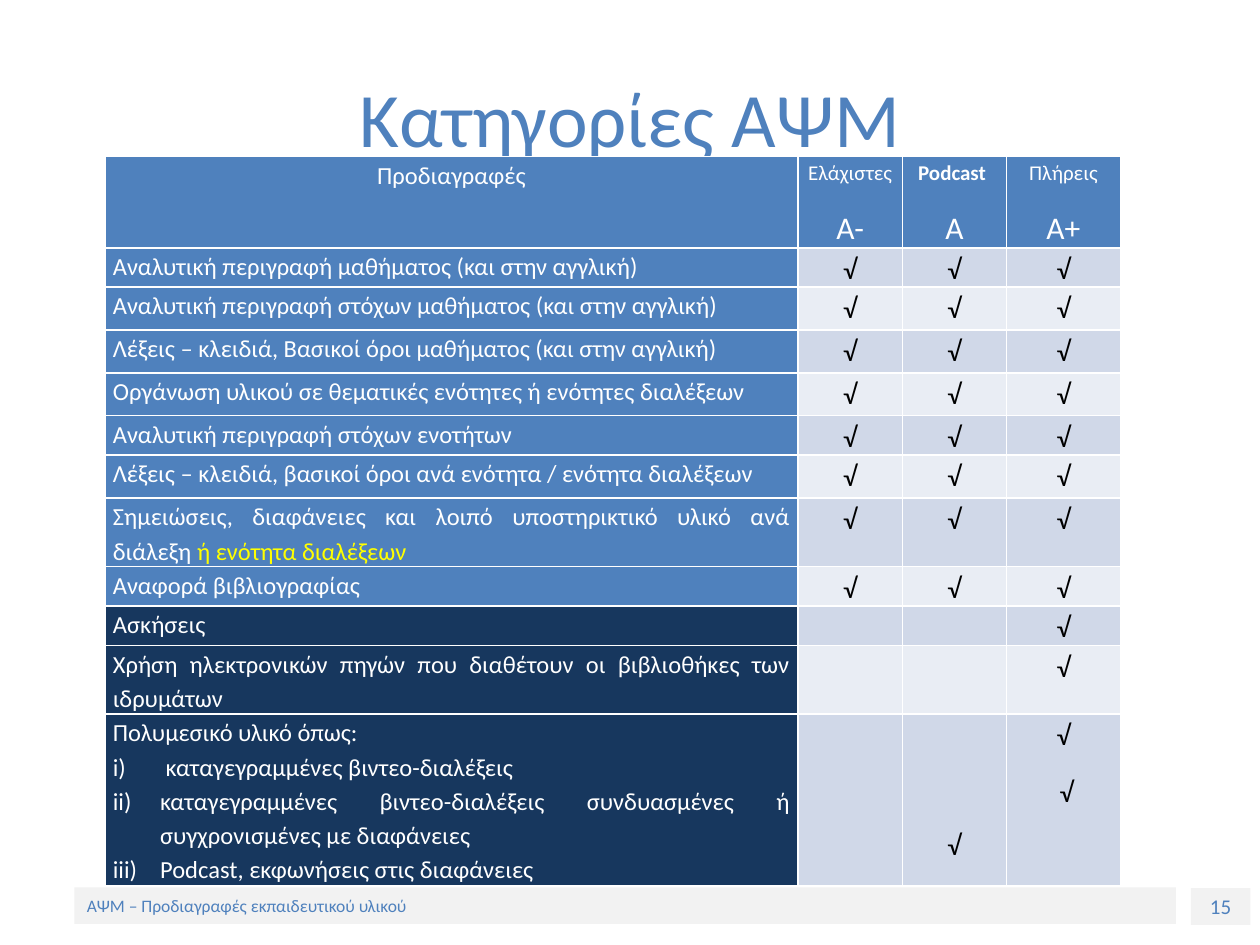
from typing import NamedTuple

from lxml.etree import SubElement
from pptx import Presentation
from pptx.dml.color import RGBColor
from pptx.enum.shapes import MSO_SHAPE
from pptx.enum.text import MSO_ANCHOR, PP_ALIGN
from pptx.oxml.ns import qn
from pptx.util import Pt

FONT = "Calibri"
BLUE, NAVY, WHITE, BLACK = "4F81BD", "17375E", "FFFFFF", "000000"
YELLOW, GREY = "FFFF00", "F2F2F2"
BANDS = ("D0D8E8", "E9EDF4")
CHECK = "√"


class Requirement(NamedTuple):
    text: str
    height: float
    fill: str = BLUE
    marks: tuple = (CHECK, CHECK, CHECK)
    highlight: str = ""


class Category(NamedTuple):
    name: str
    grade: str
    bold: bool = False


class Bar(NamedTuple):
    text: str
    left: float
    top: float
    width: float
    size: float
    alignment: PP_ALIGN


COLUMN_WIDTHS = (396, 59.6, 59.6, 65)
HEADER_HEIGHT = 52
CATEGORIES = (
    Category("Ελάχιστες ", "Α-"),
    Category("Podcast ", "A", True),
    Category("Πλήρεις", "Α+"),
)
FULL_ONLY = ("", "", CHECK)
REQUIREMENTS = (
    Requirement("Αναλυτική περιγραφή μαθήματος (και στην αγγλική)", 22),
    Requirement("Αναλυτική περιγραφή στόχων μαθήματος (και στην αγγλική)", 24.5),
    Requirement("Λέξεις – κλειδιά, Βασικοί όροι μαθήματος (και στην αγγλική)", 24.5),
    Requirement("Οργάνωση υλικού σε θεματικές ενότητες ή ενότητες διαλέξεων", 24.5),
    Requirement("Αναλυτική περιγραφή στόχων ενοτήτων ", 22),
    Requirement("Λέξεις – κλειδιά, βασικοί όροι ανά ενότητα / ενότητα διαλέξεων ", 24.5),
    Requirement("Σημειώσεις, διαφάνειες και λοιπό υποστηρικτικό υλικό ανά διάλεξη ", 38,
                highlight="ή ενότητα διαλέξεων "),
    Requirement("Αναφορά βιβλιογραφίας", 22),
    Requirement("Ασκήσεις", 22, NAVY, FULL_ONLY),
    Requirement("Χρήση ηλεκτρονικών πηγών που διαθέτουν οι βιβλιοθήκες των ιδρυμάτων",
                38, NAVY, FULL_ONLY),
    Requirement(
        "Πολυμεσικό υλικό όπως:\n"
        " καταγεγραμμένες βιντεο-διαλέξεις \n"
        "καταγεγραμμένες βιντεο-διαλέξεις συνδυασμένες ή συγχρονισμένες με διαφάνειες\n"
        "Podcast, εκφωνήσεις στις διαφάνειες",
        97, NAVY, ("", CHECK, "√\n √")),
)
BARS = (
    Bar("15", 680.5, 507.5, 34, 12, PP_ALIGN.CENTER),
    Bar("ΑΨΜ – Προδιαγραφές εκπαιδευτικού υλικού", 42.5, 507, 629.5, 10, PP_ALIGN.LEFT),
)


def color(value: str) -> RGBColor:
    return RGBColor.from_string(value)


def format_font(font, size: float, value: str, bold: bool = False) -> None:
    font.name = FONT
    font.size = Pt(size)
    font.bold = bold
    font.color.rgb = color(value)


def add_borders(cell) -> None:
    properties = cell._tc.get_or_add_tcPr()
    for position, side in enumerate(("lnL", "lnR", "lnT", "lnB")):
        line = properties.makeelement(qn(f"a:{side}"), {"w": str(Pt(1))})
        fill = SubElement(line, qn("a:solidFill"))
        SubElement(fill, qn("a:srgbClr"), {"val": WHITE})
        properties.insert(position, line)


def fill_cell(cell, text: str, fill: str, alignment: PP_ALIGN,
              size: float, value: str) -> None:
    cell.margin_left = cell.margin_right = Pt(4.5)
    cell.margin_top = cell.margin_bottom = 0
    cell.fill.solid()
    cell.fill.fore_color.rgb = color(fill)
    add_borders(cell)
    cell.text_frame.text = text
    for paragraph in cell.text_frame.paragraphs:
        paragraph.alignment = alignment
        paragraph.line_spacing = 1.15
        paragraph.space_after = Pt(10)
        format_font(paragraph.font, size, value)
        for run in paragraph.runs:
            format_font(run.font, size, value)


def number_paragraph(paragraph) -> None:
    properties = paragraph._p.get_or_add_pPr()
    properties.set("marL", str(Pt(27)))
    properties.set("indent", str(Pt(-27)))
    numbering = properties.makeelement(qn("a:buAutoNum"), {"type": "romanLcParenR"})
    properties.insert_element_before(numbering, "a:tabLst", "a:defRPr", "a:extLst")


def add_bar(slide, bar: Bar) -> None:
    shape = slide.shapes.add_shape(MSO_SHAPE.RECTANGLE, Pt(bar.left), Pt(bar.top),
                                   Pt(bar.width), Pt(21))
    shape.shadow.inherit = False
    shape.fill.solid()
    shape.fill.fore_color.rgb = color(GREY)
    shape.line.fill.background()
    text_frame = shape.text_frame
    text_frame.text = bar.text
    text_frame.vertical_anchor = MSO_ANCHOR.MIDDLE
    paragraph = text_frame.paragraphs[0]
    paragraph.alignment = bar.alignment
    format_font(paragraph.runs[0].font, bar.size, BLUE)


def add_title(slide) -> None:
    title = slide.shapes.title
    title.left, title.top, title.width, title.height = Pt(36), Pt(21.6), Pt(648), Pt(90)
    title.text_frame.text = "Κατηγορίες ΑΨΜ"
    title.text_frame.vertical_anchor = MSO_ANCHOR.MIDDLE
    paragraph = title.text_frame.paragraphs[0]
    paragraph.alignment = PP_ALIGN.CENTER
    format_font(paragraph.runs[0].font, 44, BLUE)


def add_requirements(slide) -> None:
    heights = [HEADER_HEIGHT] + [item.height for item in REQUIREMENTS]
    table = slide.shapes.add_table(len(heights), len(COLUMN_WIDTHS), Pt(60), Pt(89.5),
                                   Pt(sum(COLUMN_WIDTHS)), Pt(sum(heights))).table
    table.first_row = table.horz_banding = False
    for column, width in zip(table.columns, COLUMN_WIDTHS):
        column.width = Pt(width)
    for row, height in zip(table.rows, heights):
        row.height = Pt(height)

    # Header row
    fill_cell(table.cell(0, 0), "Προδιαγραφές", BLUE, PP_ALIGN.CENTER, 14, WHITE)
    for column, category in enumerate(CATEGORIES, 1):
        cell = table.cell(0, column)
        fill_cell(cell, f"{category.name}\n{category.grade}", BLUE,
                  PP_ALIGN.CENTER, 18, WHITE)
        name = cell.text_frame.paragraphs[0]
        format_font(name.runs[0].font, 12, WHITE, category.bold)

    # Requirements and check marks
    for row, item in enumerate(REQUIREMENTS, 1):
        cell = table.cell(row, 0)
        fill_cell(cell, item.text, item.fill, PP_ALIGN.JUSTIFY, 14, WHITE)
        if item.highlight:
            run = cell.text_frame.paragraphs[0].add_run()
            run.text = item.highlight
            format_font(run.font, 14, YELLOW)
        for column, mark in enumerate(item.marks, 1):
            fill_cell(table.cell(row, column), mark, BANDS[(row - 1) % 2],
                      PP_ALIGN.CENTER, 16, BLACK)

    # Multimedia row: numbered list, podcast mark level with its item
    last = len(REQUIREMENTS)
    paragraphs = table.cell(last, 0).text_frame.paragraphs
    for paragraph in paragraphs:
        paragraph.space_after = Pt(0)
    for paragraph in paragraphs[1:]:
        number_paragraph(paragraph)
    podcast = table.cell(last, 2)
    podcast.vertical_anchor = MSO_ANCHOR.BOTTOM
    podcast.margin_bottom = Pt(13)
    podcast.text_frame.paragraphs[0].space_after = Pt(0)


def main() -> None:
    presentation = Presentation()
    presentation.slide_width, presentation.slide_height = Pt(720), Pt(540)
    slide = presentation.slides.add_slide(presentation.slide_layouts[5])
    for bar in BARS:
        add_bar(slide, bar)
    add_title(slide)
    add_requirements(slide)
    presentation.save("out.pptx")


if __name__ == "__main__":
    main()
